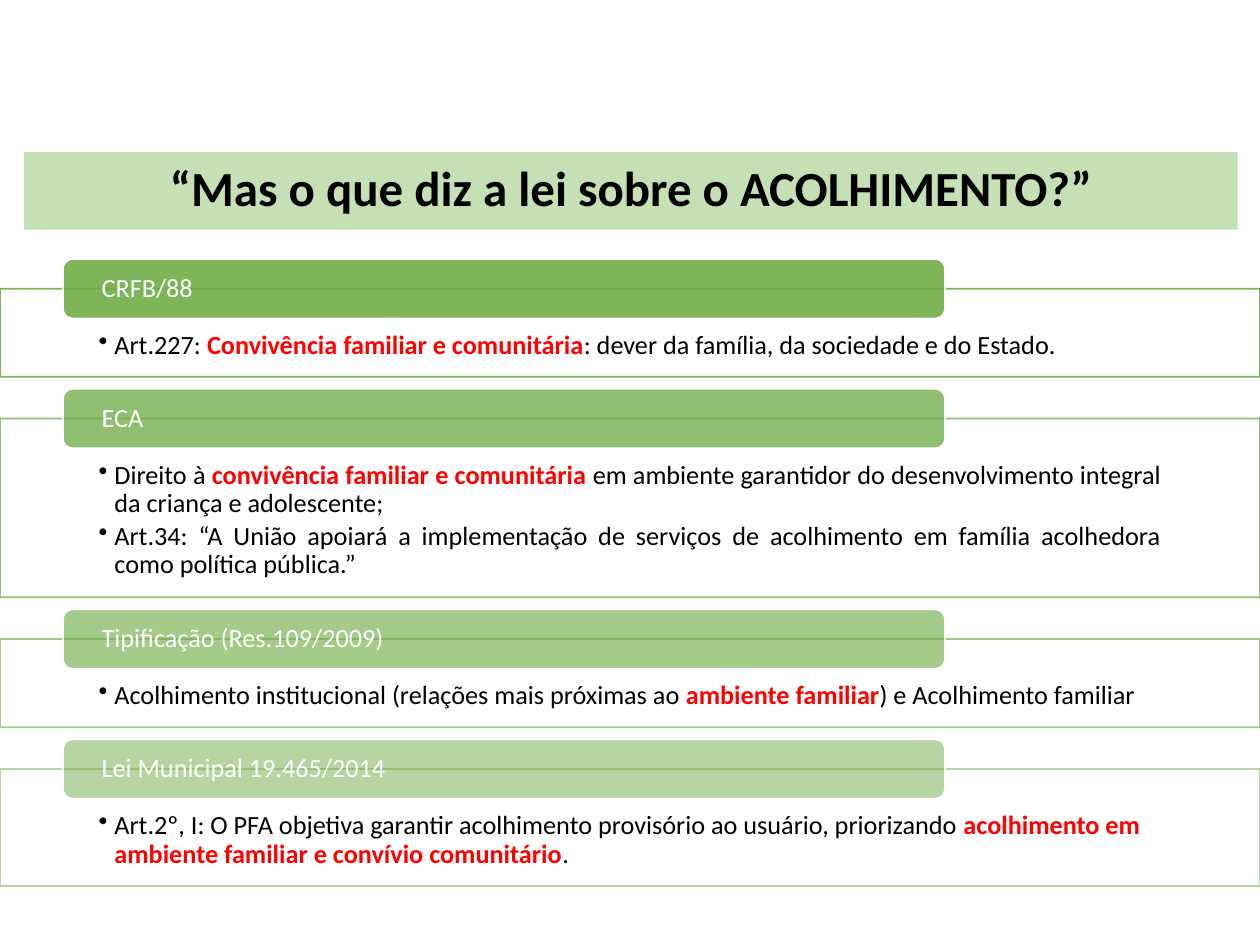
from dataclasses import dataclass

from pptx import Presentation
from pptx import util as u
from pptx.dml.color import RGBColor
from pptx.enum import shapes, text
from pptx.oxml.ns import qn
from lxml import etree


@dataclass(frozen=True)
class Theme:
    font: str = "Calibri"
    title_size: int = 28
    text_size: int = 15
    title_fill: str = "C5E0B4"
    green: str = "70AD47"
    white: str = "FFFFFF"
    black: str = "000000"
    red: str = "FF0000"


# Heading, opacity of its green, box height, alignment, bullets (*...* is emphasis)
LEFT, JUSTIFY = text.PP_ALIGN.LEFT, text.PP_ALIGN.JUSTIFY
SECTIONS = [
    ("CRFB/88", 90, 50.4, LEFT, [
        "Art.227: *Convivência familiar e comunitária*: dever da família, "
        "da sociedade e do Estado."]),
    ("ECA", 77, 102.2, JUSTIFY, [
        "Direito à *convivência familiar e comunitária *em ambiente garantidor "
        "do desenvolvimento integral da criança e adolescente;",
        "Art.34: “A União apoiará a implementação de serviços de acolhimento "
        "em família acolhedora como política pública.”"]),
    ("Tipificação (Res.109/2009)", 63, 50.4, JUSTIFY, [
        "Acolhimento institucional (relações mais próximas ao "
        "*ambiente familiar*) e Acolhimento familiar"]),
    ("Lei Municipal 19.465/2014", 50, 67, LEFT, [
        "Art.2º, I: O PFA objetiva garantir acolhimento provisório ao usuário, "
        "priorizando *acolhimento em ambiente familiar e convívio comunitário*."]),
]
PAGE_WIDTH, PAGE_HEIGHT = 720, 540
FIRST_TOP, GAP = 165, 23.8
BAR_LEFT, BAR_WIDTH, BAR_HEIGHT, BAR_RISE = 36, 504, 34, 17
TEXT_LEFT = 56.4


def set_opacity(parent, percent):
    """Make the solid colour inside an XML element partly transparent."""
    color = parent.find(qn("a:solidFill")).find(qn("a:srgbClr"))
    etree.SubElement(color, qn("a:alpha")).set("val", str(percent * 1000))


class Page:
    def __init__(self, slide, theme):
        self.slide = slide
        self.theme = theme

    def style(self, font, size, color, bold=False):
        font.name = self.theme.font
        font.size = u.Pt(size)
        font.bold = bold
        font.color.rgb = RGBColor.from_string(color)

    def title(self, words, left, top, width, height):
        box = self.slide.shapes.title
        box.left, box.top, box.width, box.height = map(u.Pt, (left, top, width, height))
        box.fill.solid()
        box.fill.fore_color.rgb = RGBColor.from_string(self.theme.title_fill)
        frame = box.text_frame
        frame.text = words
        frame.auto_size = text.MSO_AUTO_SIZE.NONE
        frame.vertical_anchor = text.MSO_ANCHOR.MIDDLE
        para = frame.paragraphs[0]
        para.alignment = text.PP_ALIGN.CENTER
        para.line_spacing = 0.9
        self.style(para.runs[0].font, self.theme.title_size, self.theme.black, True)

    def block(self, kind, bounds, fill, line, fill_opacity, line_opacity, insets, anchor):
        box = self.slide.shapes.add_shape(kind, *map(u.Pt, bounds))
        box.shadow.inherit = False
        box.fill.solid()
        box.fill.fore_color.rgb = RGBColor.from_string(fill)
        box.line.color.rgb = RGBColor.from_string(line)
        box.line.width = u.Pt(1)
        properties = box._element.spPr
        set_opacity(properties, fill_opacity)
        set_opacity(properties.find(qn("a:ln")), line_opacity)
        frame = box.text_frame
        frame.word_wrap = True
        frame.vertical_anchor = anchor
        (frame.margin_left, frame.margin_top,
         frame.margin_right, frame.margin_bottom) = map(u.Pt, insets)
        return box

    def bar(self, words, top, opacity):
        inset = TEXT_LEFT - BAR_LEFT
        box = self.block(shapes.MSO_SHAPE.ROUNDED_RECTANGLE,
                         (BAR_LEFT, top, BAR_WIDTH, BAR_HEIGHT),
                         self.theme.green, self.theme.white, opacity, 100,
                         (inset, 0, inset, 0), text.MSO_ANCHOR.MIDDLE)
        box.text_frame.text = words
        para = box.text_frame.paragraphs[0]
        para.alignment = LEFT
        para.line_spacing = 0.9
        self.style(para.runs[0].font, self.theme.text_size, self.theme.white)

    def bullets(self, items, top, height, opacity, alignment):
        box = self.block(shapes.MSO_SHAPE.RECTANGLE, (0, top, PAGE_WIDTH, height),
                         self.theme.white, self.theme.green, 90, opacity,
                         (TEXT_LEFT, 24.6, TEXT_LEFT, 8.4), text.MSO_ANCHOR.TOP)
        frame = box.text_frame
        for index, item in enumerate(items):
            para = frame.add_paragraph() if index else frame.paragraphs[0]
            para.alignment = alignment
            para.line_spacing = 0.9
            para.space_after = u.Pt(2.5)
            properties = para._p.get_or_add_pPr()
            properties.set("marL", str(u.Pt(9)))
            properties.set("indent", str(-u.Pt(9)))
            etree.SubElement(properties, qn("a:buChar")).set("char", "•")
            for part, words in enumerate(item.split("*")):
                span = para.add_run()
                span.text = words
                strong = part % 2 == 1
                color = self.theme.red if strong else self.theme.black
                self.style(span.font, self.theme.text_size, color, strong)


def main():
    deck = Presentation()
    deck.slide_width, deck.slide_height = u.Pt(PAGE_WIDTH), u.Pt(PAGE_HEIGHT)
    page = Page(deck.slides.add_slide(deck.slide_layouts[5]), Theme())
    page.title("“Mas o que diz a lei sobre o ACOLHIMENTO?”", 13.7, 87, 693.5, 44.3)
    top = FIRST_TOP
    for heading, opacity, height, alignment, items in SECTIONS:
        page.bullets(items, top, height, opacity, alignment)
        page.bar(heading, top - BAR_RISE, opacity)
        top += height + GAP
    deck.save("out.pptx")


if __name__ == "__main__":
    main()
